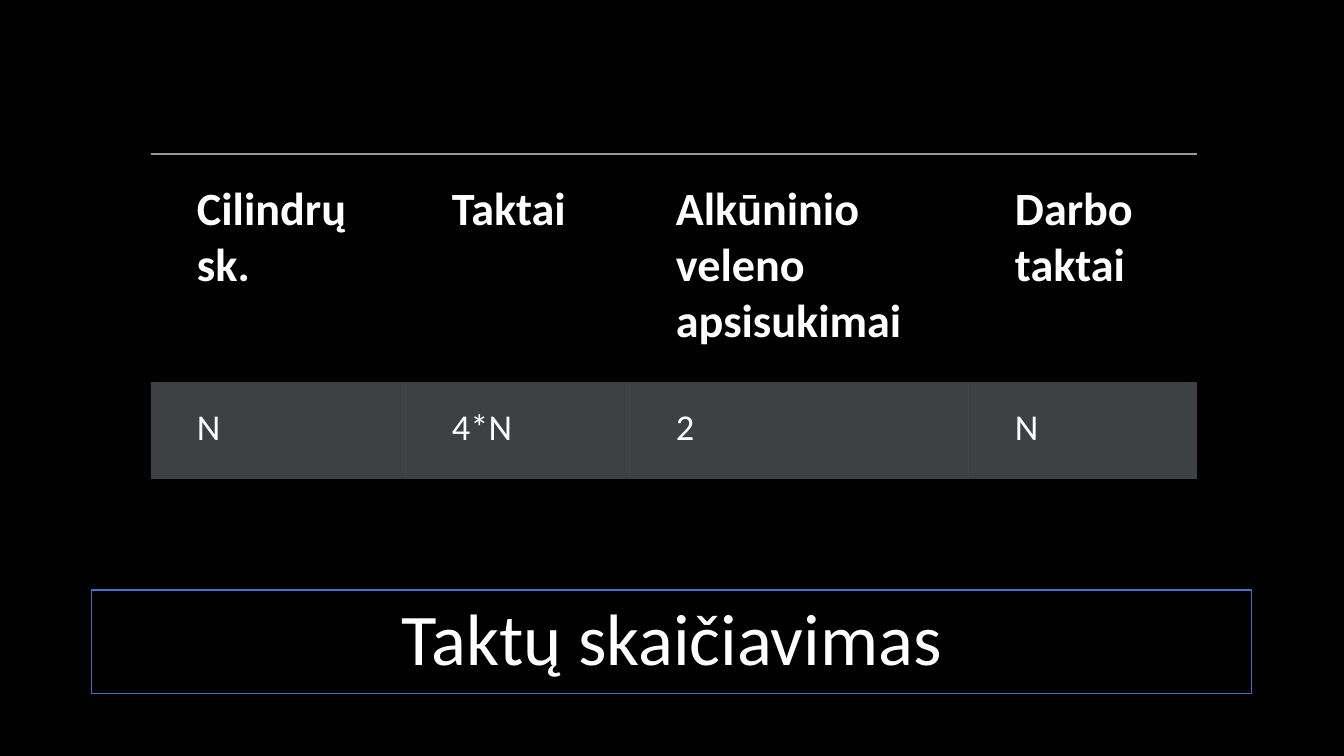
from lxml.etree import SubElement
from pptx import Presentation
from pptx.dml.color import RGBColor
from pptx.enum.text import MSO_ANCHOR, PP_ALIGN
from pptx.oxml import parse_xml
from pptx.oxml.ns import nsdecls, qn
from pptx.util import Pt

EMU_PER_PX = 12192000 / 1344
FONT = "Calibri"
WHITE = "FFFFFF"
NO_GRID_STYLE = "{2D5ABB26-0587-4C30-8999-92F81FD0307C}"

COLUMN_WIDTHS = (255, 224, 339, 228)
ROWS = (
    (228, 27, 33, True, ("Cilindrų sk.", "Taktai", "Alkūninio veleno apsisukimai", "Darbo taktai")),
    (97, 24, 26, False, ("N", "4*N", "2", "N")),
)


def px(length):
    return round(length * EMU_PER_PX)


def color(hex_code):
    return RGBColor.from_string(hex_code)


def style_text(paragraph, size, bold=False):
    font = paragraph.font
    font.name = FONT
    font.size = Pt(size)
    font.bold = bold
    font.color.rgb = color(WHITE)


def add_top_rule(cell):
    rule = parse_xml(
        f'<a:lnT {nsdecls("a")} w="{Pt(1.5)}"><a:solidFill><a:srgbClr val="8F9A9D">'
        '<a:alpha val="60000"/></a:srgbClr></a:solidFill><a:prstDash val="solid"/></a:lnT>'
    )
    cell._tc.get_or_add_tcPr().insert(0, rule)


def fill_translucent(cell, hex_code, percent):
    cell.fill.solid()
    cell.fill.fore_color.rgb = color(hex_code)
    swatch = cell._tc.tcPr.find(".//" + qn("a:srgbClr"))
    SubElement(swatch, qn("a:alpha"), val=str(percent * 1000))


def add_stroke_table(slide, left, top):
    width = sum(COLUMN_WIDTHS)
    height = sum(row[0] for row in ROWS)
    frame = slide.shapes.add_table(
        len(ROWS), len(COLUMN_WIDTHS), px(left), px(top), px(width), px(height)
    )
    strokes = frame.table
    strokes.first_row = strokes.horz_banding = False
    strokes._tbl.tblPr.find(qn("a:tableStyleId")).text = NO_GRID_STYLE
    for column, column_width in zip(strokes.columns, COLUMN_WIDTHS):
        column.width = px(column_width)
    for row, (row_height, inset, size, is_header, texts) in zip(strokes.rows, ROWS):
        row.height = px(row_height)
        for cell, text in zip(row.cells, texts):
            cell.text = text
            cell.margin_left = px(46)
            cell.margin_top = cell.margin_right = cell.margin_bottom = px(inset)
            style_text(cell.text_frame.paragraphs[0], size, is_header)
            if is_header:
                cell.fill.background()
                add_top_rule(cell)
            else:
                fill_translucent(cell, "B4BCBE", 35)


def add_title(slide, left, top, width, height):
    title = slide.shapes.add_textbox(px(left), px(top), px(width), px(height))
    title.line.color.rgb = color("4472C4")
    title.line.width = Pt(0.75)
    title.text_frame.word_wrap = True
    title.text_frame.vertical_anchor = MSO_ANCHOR.MIDDLE
    heading = title.text_frame.paragraphs[0]
    heading.text = "Taktų skaičiavimas"
    heading.alignment = PP_ALIGN.CENTER
    heading.line_spacing = 0.9
    style_text(heading, 52)


def main():
    deck = Presentation()
    deck.slide_width, deck.slide_height = px(1344), px(756)
    slide = deck.slides.add_slide(deck.slide_layouts[6])
    slide.background.fill.solid()
    slide.background.fill.fore_color.rgb = color("000000")
    add_title(slide, 92, 590, 1160, 104)
    add_stroke_table(slide, 151, 154)
    deck.save("out.pptx")


if __name__ == "__main__":
    main()
